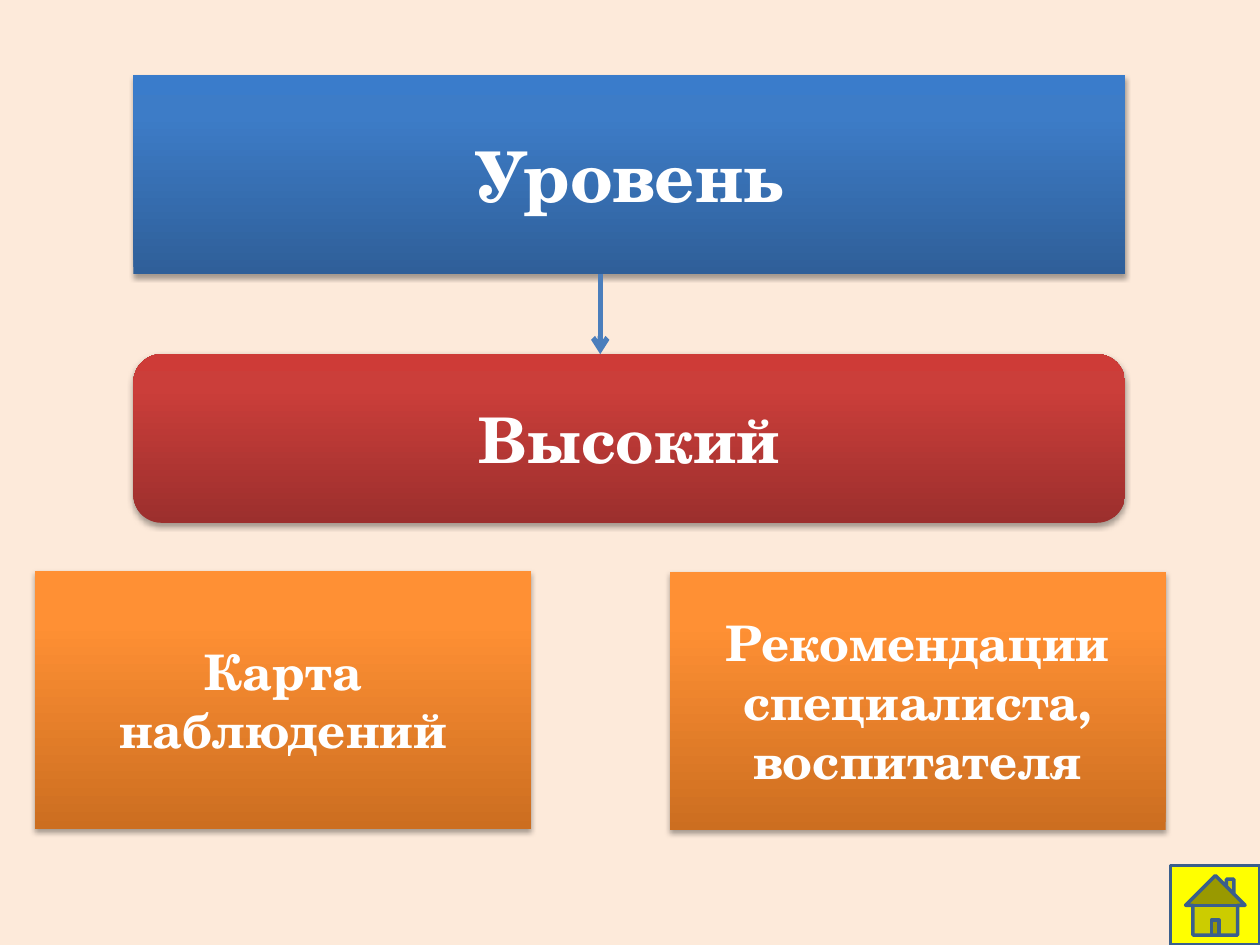
from copy import deepcopy
from dataclasses import dataclass

from lxml import etree
from pptx import Presentation
from pptx.dml.color import RGBColor
from pptx.enum.shapes import MSO_CONNECTOR, MSO_SHAPE
from pptx.enum.text import MSO_ANCHOR, PP_ALIGN
from pptx.oxml.ns import qn
from pptx.shapes.autoshape import Shape
from pptx.slide import Slide
from pptx.util import Cm, Pt

RECT = MSO_SHAPE.RECTANGLE
ROUND = MSO_SHAPE.ROUNDED_RECTANGLE
HOME = MSO_SHAPE.ACTION_BUTTON_HOME
STRAIGHT = MSO_CONNECTOR.STRAIGHT
MIDDLE = MSO_ANCHOR.MIDDLE
CENTER = PP_ALIGN.CENTER


@dataclass(frozen=True)
class Theme:
    font: str = "TeX Gyre Schola"
    back: str = "FDEADA"
    text: str = "FFFFFF"
    blue: tuple[str, ...] = ("2F5F99", "3D7CC7", "3A7CCB")
    red: tuple[str, ...] = ("9C2F2D", "CB3E3A", "CE3B37")
    orange: tuple[str, ...] = ("CC6E20", "FF9034", "FF9136")
    arrow: str = "4B7EBC"
    button: str = "FFFF00"
    border: str = "3A5F8C"
    shadow: str = "000000"
    title: int = 40
    level: int = 36
    label: int = 28


@dataclass(frozen=True)
class Box:
    text: str
    left: float
    top: float
    width: float
    height: float
    fill: tuple[str, ...]
    size: int


THEME = Theme()
STOPS = (0, 0.8, 1)
LEFT, WIDE = 2.69, 19.99
HEAD = Box("Уровень", LEFT, 1.52, WIDE, 4, THEME.blue, THEME.title)
LEVEL = Box("Высокий", LEFT, 7.14, WIDE, 3.4, THEME.red, THEME.level)
CARDS = [
    Box(text, left, top, 10, 5.2, THEME.orange, THEME.label)
    for text, left, top in (
        ("Карта наблюдений", 0.71, 11.51),
        ("Рекомендации специалиста, воспитателя", 13.5, 11.53),
    )
]


def rgb(code: str) -> RGBColor:
    return RGBColor.from_string(code)


def shade(shape: Shape, colors: tuple[str, ...]) -> None:
    shape.fill.gradient()
    shape.fill.gradient_angle = 90
    first = shape.element.spPr.find(".//" + qn("a:gs"))
    first.addnext(deepcopy(first))
    for stop, place, color in zip(shape.fill.gradient_stops, STOPS, colors):
        stop.position = place
        stop.color.rgb = rgb(color)


def cast(shape: Shape) -> None:
    shape.shadow.inherit = False
    group = shape.element.spPr.find(qn("a:effectLst"))
    outer = etree.SubElement(
        group, qn("a:outerShdw"), blurRad=str(Pt(3.1)), dist=str(Pt(1.8)),
        dir="5400000", rotWithShape="0",
    )
    color = etree.SubElement(outer, qn("a:srgbClr"), val=THEME.shadow)
    etree.SubElement(color, qn("a:alpha"), val="35000")


def style(shape: Shape, box: Box) -> None:
    shape.left, shape.top = Cm(box.left), Cm(box.top)
    shape.width, shape.height = Cm(box.width), Cm(box.height)
    shade(shape, box.fill)
    shape.line.fill.background()
    cast(shape)
    frame = shape.text_frame
    frame.word_wrap = True
    frame.vertical_anchor = MIDDLE
    para = frame.paragraphs[0]
    para.alignment = CENTER
    run = para.add_run()
    run.text = box.text
    run.font.name = THEME.font
    run.font.size = Pt(box.size)
    run.font.bold = True
    run.font.color.rgb = rgb(THEME.text)


def draw_box(slide: Slide, box: Box, kind: MSO_SHAPE) -> None:
    style(slide.shapes.add_shape(kind, 0, 0, Cm(box.width), Cm(box.height)), box)


def draw_home(slide: Slide) -> None:
    home = slide.shapes.add_shape(HOME, Cm(23.6), Cm(17.45), Cm(1.8), Cm(1.6))
    home.shadow.inherit = False
    home.fill.solid()
    home.fill.fore_color.rgb = rgb(THEME.button)
    home.line.color.rgb = rgb(THEME.border)
    home.line.width = Pt(2)


def draw_arrow(slide: Slide) -> None:
    mid = Cm(12.1)
    start = Cm(HEAD.top + HEAD.height)
    arrow = slide.shapes.add_connector(STRAIGHT, mid, start, mid, Cm(LEVEL.top))
    arrow.line.color.rgb = rgb(THEME.arrow)
    arrow.line.width = Pt(3)
    etree.SubElement(arrow.line._get_or_add_ln(), qn("a:tailEnd"), type="arrow")
    etree.SubElement(arrow.element.spPr, qn("a:effectLst"))


def main() -> None:
    deck = Presentation()
    deck.slide_width, deck.slide_height = Cm(25.4), Cm(19.05)
    slide = deck.slides.add_slide(deck.slide_layouts[5])
    slide.background.fill.solid()
    slide.background.fill.fore_color.rgb = rgb(THEME.back)
    style(slide.shapes.title, HEAD)
    draw_box(slide, LEVEL, ROUND)
    for card in CARDS:
        draw_box(slide, card, RECT)
    draw_home(slide)
    draw_arrow(slide)
    deck.save("out.pptx")


if __name__ == "__main__":
    main()
